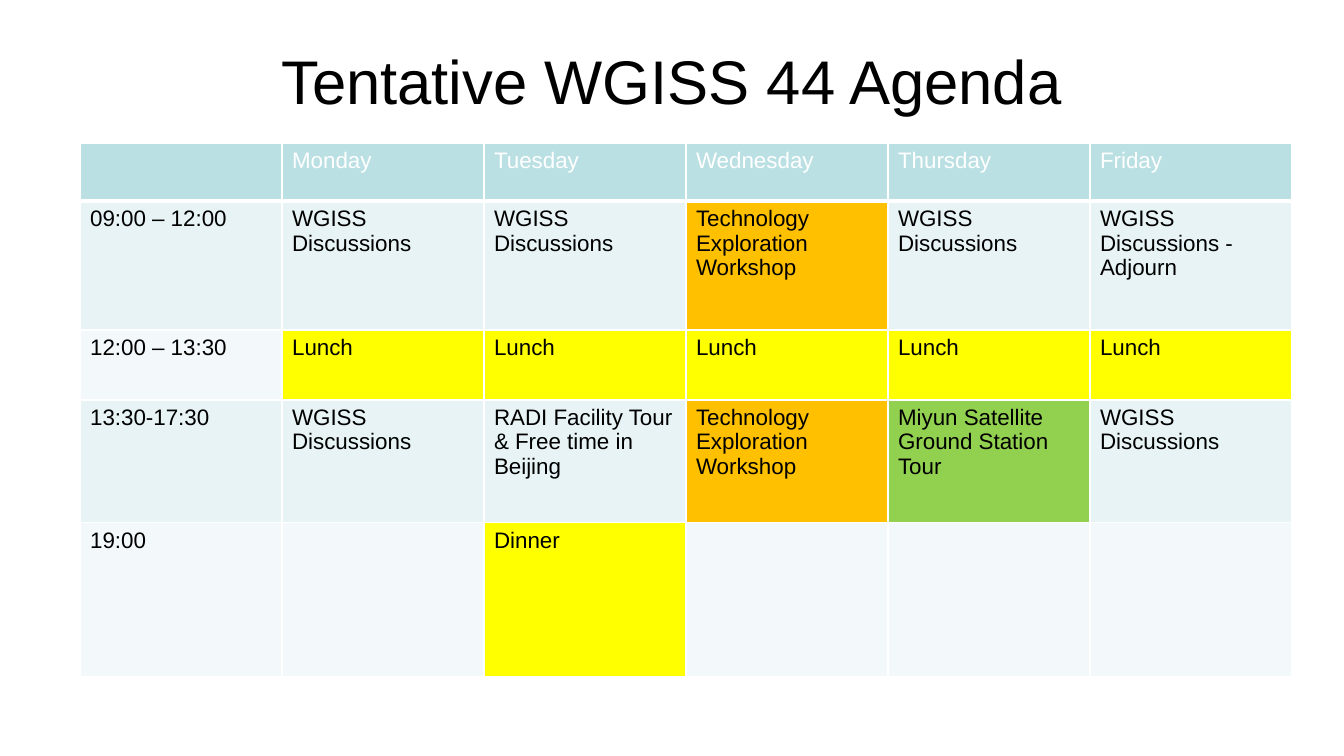
"""Build the weekly meeting agenda slide."""
from dataclasses import dataclass

from lxml.etree import SubElement as Sub
from pptx import Presentation
from pptx.dml.color import RGBColor as Rgb
from pptx.enum.text import MSO_ANCHOR as Anchor, PP_ALIGN as Align
from pptx.oxml.ns import qn
from pptx.slide import Slide
from pptx.table import _Cell as Cell
from pptx.text.text import TextFrame as Frame
from pptx.util import Emu, Pt


@dataclass(frozen=True)
class Theme:
    """Colours, font and type sizes."""
    font: str = "Arial"
    title: int = 44
    body: int = 16
    ink: str = "000000"
    white: str = "FFFFFF"
    head: str = "BBE0E3"
    odd: str = "E7F3F4"
    even: str = "F3F9FA"
    shop: str = "FFC000"
    meal: str = "FFFF00"
    tour: str = "92D050"


@dataclass(frozen=True)
class Slot:
    """One cell of the agenda, with an optional highlight."""
    text: str = ""
    fill: str = ""


@dataclass(frozen=True)
class Band:
    """One row of the agenda."""
    high: int
    fill: str
    slots: tuple[Slot, ...]
    ink: str = Theme.ink
    rule: int = 1


T = Theme()
LEFT, TOP, COL = 80, 143, 202
TALK = Slot("WGISS Discussions")
SHOP = Slot("Technology Exploration Workshop", T.shop)
LUNCH = Slot("Lunch", T.meal)
FREE = Slot()
DAYS = ("", "Monday", "Tuesday", "Wednesday", "Thursday", "Friday")
BANDS = (
    Band(58, T.head, tuple(Slot(day) for day in DAYS), T.white, 3),
    Band(129, T.odd, (Slot("09:00 – 12:00"), TALK, TALK, SHOP, TALK,
                      Slot("WGISS Discussions - Adjourn"))),
    Band(70, T.even, (Slot("12:00 – 13:30"),) + (LUNCH,) * 5),
    Band(123, T.odd, (Slot("13:30-17:30"), TALK,
                      Slot("RADI Facility Tour\n& Free time in Beijing"), SHOP,
                      Slot("Miyun Satellite Ground Station Tour", T.tour), TALK)),
    Band(154, T.even, (Slot("19:00"), FREE, Slot("Dinner", T.meal), FREE, FREE, FREE)),
)


def px(n: int) -> Emu:
    """Turn px into EMU."""
    return Emu(round(n * 914400 / 100.8))


def write(frame: Frame, text: str, *, size: int = T.body, ink: str = T.ink,
          align: Align = Align.LEFT) -> None:
    """Fill a text frame with formatted text."""
    frame.word_wrap = True
    frame.text = text
    for para in frame.paragraphs:
        para.alignment = align
        font = para.font
        font.name, font.size, font.bold = T.font, Pt(size), False
        font.color.rgb = Rgb.from_string(ink)


def edge(cell: Cell, side: str, width: int) -> None:
    """Draw one white border of a cell."""
    line = Sub(cell._tc.get_or_add_tcPr(), qn(f"a:ln{side}"), w=str(Pt(width)))
    Sub(Sub(line, qn("a:solidFill")), qn("a:srgbClr"), val=T.white)


def paint(cell: Cell, slot: Slot, band: Band) -> None:
    """Draw one agenda cell."""
    write(cell.text_frame, slot.text, ink=band.ink)
    for side in "LRT":
        edge(cell, side, 1)
    edge(cell, "B", band.rule)
    cell.fill.solid()
    cell.fill.fore_color.rgb = Rgb.from_string(slot.fill or band.fill)


def agenda(slide: Slide) -> None:
    """Draw the agenda table."""
    high = sum(band.high for band in BANDS)
    table = slide.shapes.add_table(len(BANDS), len(DAYS), px(LEFT), px(TOP),
                                   px(COL * len(DAYS)), px(high)).table
    for col in table.columns:
        col.width = px(COL)
    for row, band in zip(table.rows, BANDS):
        row.height = px(band.high)
        for cell, slot in zip(row.cells, band.slots):
            paint(cell, slot, band)


def main() -> None:
    """Build and save the slide."""
    deck = Presentation()
    deck.slide_width, deck.slide_height = px(1344), px(756)
    slide = deck.slides.add_slide(deck.slide_layouts[6])
    title = slide.shapes.add_textbox(px(67), px(17), px(1210), px(126)).text_frame
    title.vertical_anchor = Anchor.MIDDLE
    write(title, "Tentative WGISS 44 Agenda", size=T.title, align=Align.CENTER)
    agenda(slide)
    deck.save("out.pptx")


if __name__ == "__main__":
    main()
